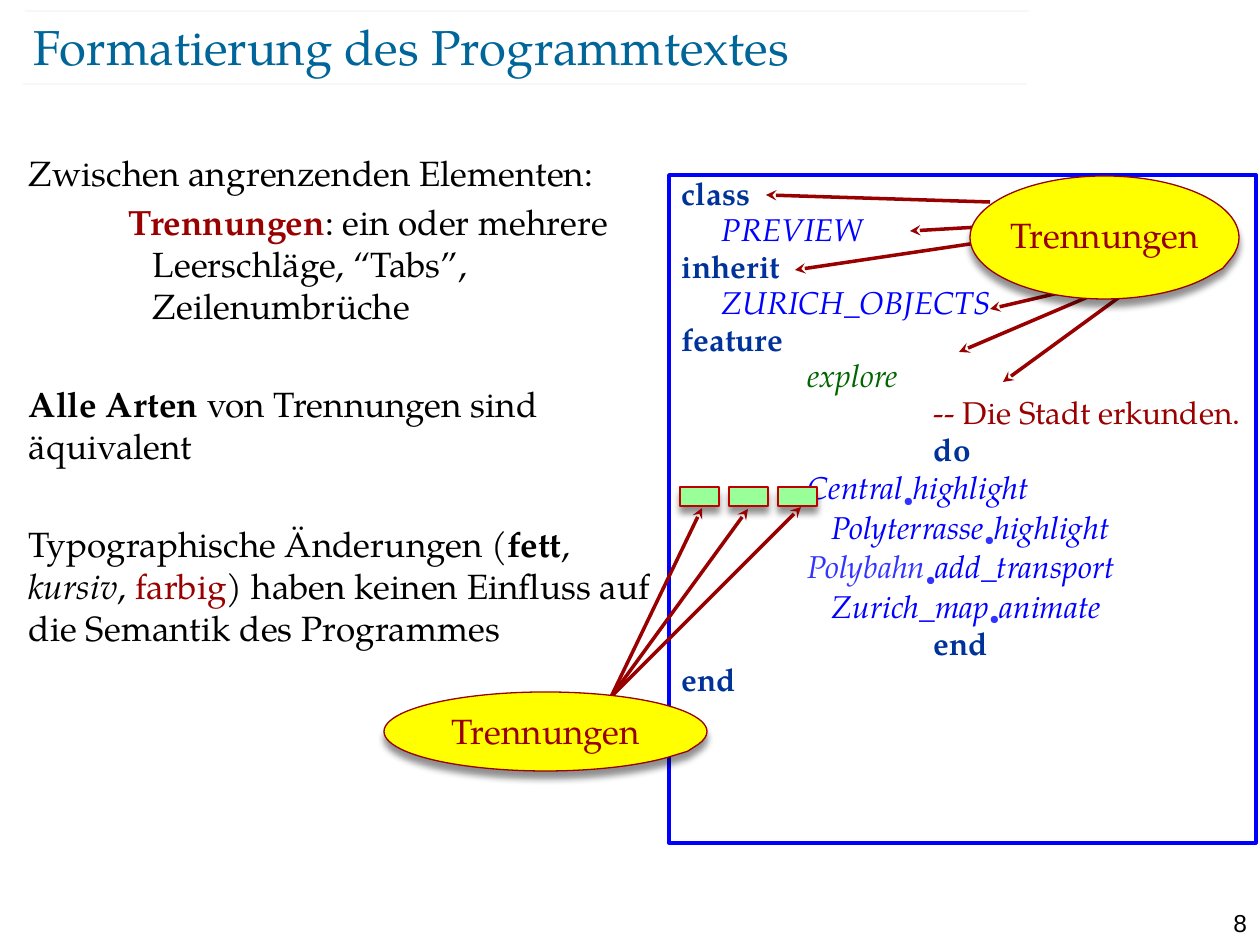
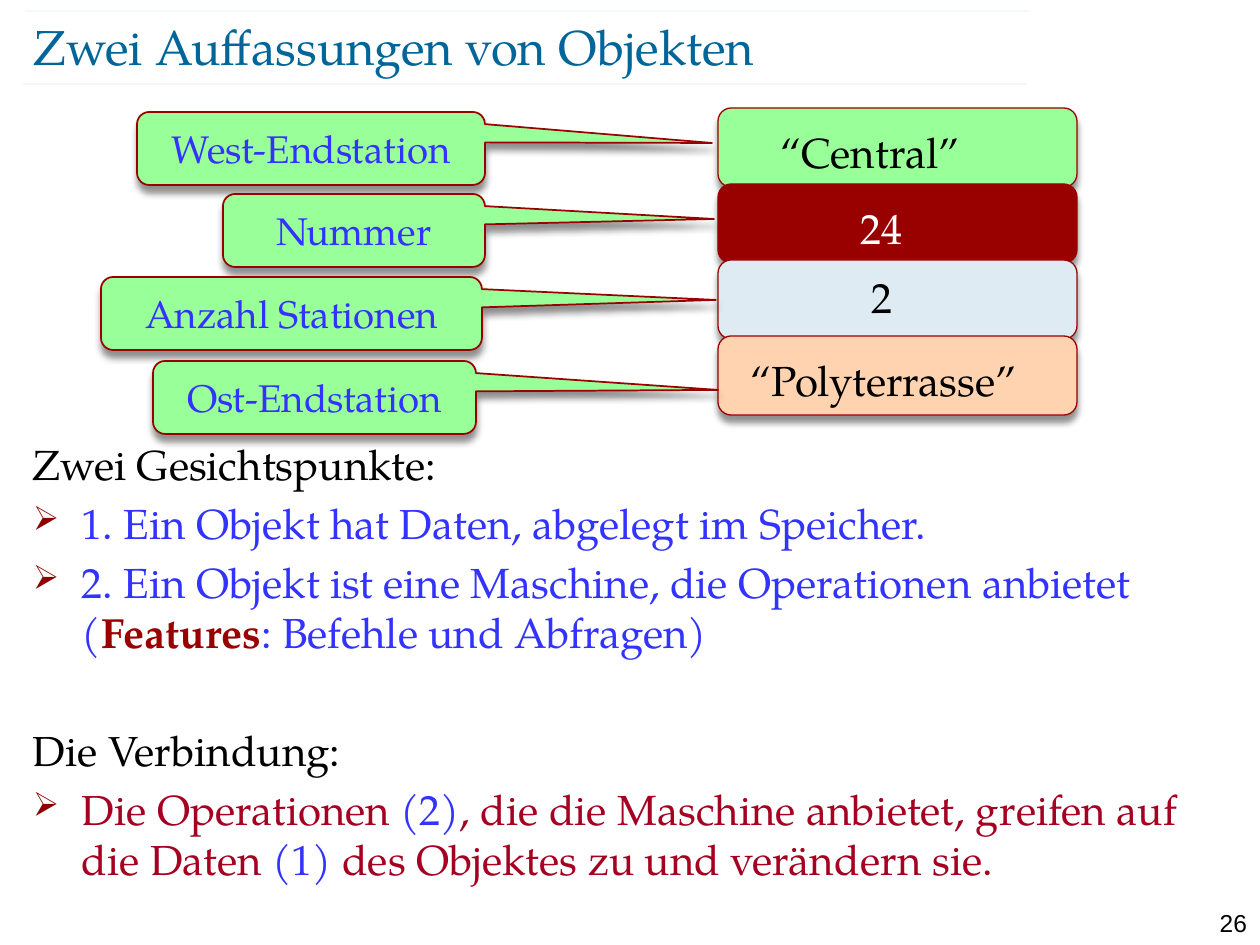
from dataclasses import dataclass
from typing import NamedTuple

from lxml import etree
from pptx import Presentation
from pptx.dml.color import RGBColor
from pptx.enum.shapes import MSO_CONNECTOR, MSO_SHAPE
from pptx.enum.text import MSO_ANCHOR, MSO_AUTO_SIZE, PP_ALIGN
from pptx.oxml.ns import qn
from pptx.util import Emu, Pt

LEFT, CENTER, RIGHT = PP_ALIGN.LEFT, PP_ALIGN.CENTER, PP_ALIGN.RIGHT
TOP, MIDDLE = MSO_ANCHOR.TOP, MSO_ANCHOR.MIDDLE
RECT, CARD = MSO_SHAPE.RECTANGLE, MSO_SHAPE.ROUNDED_RECTANGLE
ELLIPSE, CALLOUT = MSO_SHAPE.OVAL_CALLOUT, MSO_SHAPE.ROUNDED_RECTANGULAR_CALLOUT
STRAIGHT = MSO_CONNECTOR.STRAIGHT
TITLE_ONLY = 5
PX_PER_INCH = 126
INSETS = (13, 6, 13, 6)


@dataclass(frozen=True)
class Theme:
    font: str = "TeX Gyre Pagella"
    number_font: str = "Arial"
    title: str = "006699"
    black: str = "000000"
    white: str = "FFFFFF"
    red: str = "990000"
    crimson: str = "A50021"
    bullet: str = "8B0000"
    marker_edge: str = "C00000"
    blue: str = "3333FF"
    code_blue: str = "0000FF"
    keyword: str = "003399"
    feature: str = "006600"
    green: str = "99FF99"
    yellow: str = "FFFF00"
    pale_blue: str = "DFEBF3"
    peach: str = "FFD3AF"
    title_size: int = 28
    large_size: int = 24
    label_size: int = 22
    body_size: int = 20
    code_size: int = 18
    number_size: int = 14


THEME = Theme()


class Span(NamedTuple):
    text: str
    color: str = THEME.black
    bold: bool = False
    italic: bool = False
    baseline: int = 0


class Line(NamedTuple):
    spans: list
    before: float = 0
    margin: int = 0
    indent: int = 0
    bullet: str = ""


def px(length):
    return Emu(round(length * 914400 / PX_PER_INCH))


def rgb(color):
    return RGBColor.from_string(color)


def add_node(parent, tag, **attributes):
    node = etree.SubElement(parent, qn(tag))
    for name, value in attributes.items():
        node.set(name, str(value))
    return node


# Text
def set_bullet(para, character):
    properties = para._p.get_or_add_pPr()
    add_node(add_node(properties, "a:buClr"), "a:srgbClr", val=THEME.bullet)
    add_node(properties, "a:buSzPct", val=80000)
    add_node(properties, "a:buChar", char=character)


def write(shape, lines, size, align=LEFT, anchor=TOP, insets=INSETS,
          spacing=None, font=THEME.font):
    frame = shape.text_frame
    frame.word_wrap = True
    frame.auto_size = MSO_AUTO_SIZE.NONE
    frame.vertical_anchor = anchor
    (frame.margin_left, frame.margin_top,
     frame.margin_right, frame.margin_bottom) = map(px, insets)
    for index, line in enumerate(lines):
        para = frame.add_paragraph() if index else frame.paragraphs[0]
        properties = para._p.get_or_add_pPr()
        properties.set("marL", str(px(line.margin)))
        properties.set("indent", str(px(line.indent)))
        if line.bullet:
            set_bullet(para, line.bullet)
        para.alignment = align
        para.space_before = Pt(line.before if index else 0)
        if spacing:
            para.line_spacing = spacing
        for span in line.spans:
            run = para.add_run()
            run.text = span.text
            run.font.name = font
            run.font.size = Pt(size)
            run.font.color.rgb = rgb(span.color)
            run.font.bold = span.bold
            run.font.italic = span.italic
            if span.baseline:
                run._r.get_or_add_rPr().set("baseline", str(span.baseline * 1000))


def add_text(page, place, lines, size, **options):
    box = page.shapes.add_textbox(*map(px, place))
    write(box, lines, size, **options)


# Shapes
def add_panel(page, kind, place, fill=None, edge=THEME.red, width=0.75, shadow=True):
    panel = page.shapes.add_shape(kind, *map(px, place))
    if fill:
        panel.fill.solid()
        panel.fill.fore_color.rgb = rgb(fill)
    else:
        panel.fill.background()
    panel.line.color.rgb = rgb(edge)
    panel.line.width = Pt(width)
    panel.shadow.inherit = False
    if shadow:
        effects = panel.element.spPr.find(qn("a:effectLst"))
        outer = add_node(effects, "a:outerShdw", blurRad=Pt(4), dist=Pt(4),
                         dir=5400000, rotWithShape=0)
        shade = add_node(outer, "a:srgbClr", val=THEME.black)
        add_node(shade, "a:alpha", val=43000)
    return panel


def add_line(page, start, end, color, width, arrow=False, opacity=None):
    line = page.shapes.add_connector(STRAIGHT, *map(px, start + end))
    line.line.color.rgb = rgb(color)
    line.line.width = Pt(width)
    properties = line.element.spPr
    outline = properties.find(qn("a:ln"))
    if opacity:
        add_node(outline.find(".//" + qn("a:srgbClr")), "a:alpha", val=opacity * 1000)
    if arrow:
        add_node(outline, "a:tailEnd", type="stealth")
    add_node(properties, "a:effectLst")


def add_arrow(page, start, end):
    add_line(page, start, end, THEME.red, 2, arrow=True)


def add_separator_bubble(page, place, insets=INSETS):
    bubble = add_panel(page, ELLIPSE, place, THEME.yellow)
    bubble.adjustments[0], bubble.adjustments[1] = 0.44, 0.25
    write(bubble, [Line([Span("Trennungen", THEME.red)])], THEME.body_size,
          align=CENTER, insets=insets)


def add_field_callout(page, text, place, tip):
    left, top, width, height = place
    callout = add_panel(page, CALLOUT, place, THEME.green, width=1)
    callout.adjustments[0] = (tip[0] - left) / width - 0.5
    callout.adjustments[1] = (tip[1] - top) / height - 0.5
    write(callout, [Line([Span(text, THEME.blue)])], THEME.label_size,
          align=CENTER, anchor=MIDDLE, insets=(0, 6, 0, 6))


# Frame shared by both slides
def add_page(deck, title, number):
    page = deck.slides.add_slide(deck.slide_layouts[TITLE_ONLY])
    for left, top in ((23, 84), (25, 11)):
        add_line(page, (left, top), (left + 1004, top), THEME.title, 0.1, opacity=35)
    heading = page.shapes.title
    heading.left, heading.top, heading.width, heading.height = map(px, (34, 16, 1095, 60))
    write(heading, [Line([Span(title, THEME.title)])], THEME.title_size,
          anchor=MIDDLE, insets=(0, 0, 0, 0))
    add_text(page, (1190, 902, 70, 30), [Line([Span(str(number))])],
             THEME.number_size, align=RIGHT, font=THEME.number_font)
    return page


# Code listing
def code_line(text, color, margin=0, bold=False, italic=False):
    return Line([Span(text, color, bold, italic)], 3.6, margin)


def keyword(text, margin=0):
    return code_line(text, THEME.keyword, margin, bold=True)


def name(text, margin, color=THEME.code_blue):
    return code_line(text, color, margin, italic=True)


def call(target, feature, margin, color=THEME.code_blue):
    return Line([Span(target, color, italic=True),
                 Span("•", THEME.blue, baseline=-20),
                 Span(feature, THEME.code_blue, italic=True)], 3.6, margin)


def add_code(page):
    lines = [
        keyword("class"),
        name("PREVIEW", 40),
        keyword("inherit"),
        name("ZURICH_OBJECTS", 40),
        keyword("feature"),
        name("explore", 126, THEME.feature),
        code_line("-- Die Stadt erkunden.", THEME.red, 252),
        keyword("do", 252),
        call("Central", "highlight", 126),
        call("Polyterrasse", "highlight", 150),
        call("Polybahn", "add_transport", 126, THEME.blue),
        call("Zurich_map", "animate", 150),
        keyword("end", 252),
        keyword("end"),
    ]
    listing = add_panel(page, RECT, (669, 175, 587, 668), edge=THEME.code_blue,
                        width=2, shadow=False)
    write(listing, lines, THEME.code_size, spacing=0.8)


def build_formatting(deck):
    page = add_page(deck, "Formatierung des Programmtextes", 8)
    add_text(page, (16, 145, 654, 724), [
        Line([Span("Zwischen angrenzenden Elementen:")]),
        Line([Span("Trennungen", THEME.red, bold=True),
              Span(": ein oder mehrere Leerschläge, “Tabs”, Zeilenumbrüche")],
             4, margin=124, indent=-24),
        Line([Span("Alle Arten ", bold=True),
              Span("von Trennungen sind äquivalent")], 32),
        Line([Span("Typographische Änderungen ("), Span("fett", bold=True), Span(", "),
              Span("kursiv", italic=True), Span(", "), Span("farbig", THEME.red),
              Span(") haben keinen Einfluss auf die Semantik des Programmes")], 32),
    ], THEME.body_size)
    add_code(page)

    # Arrows to the breaks between code words
    for start, end in (((990, 202), (766, 195)), ((979, 227), (910, 231)),
                       ((990, 241), (795, 270)), ((1067, 291), (990, 309)),
                       ((1102, 291), (959, 352)), ((1121, 296), (1003, 382))):
        add_arrow(page, start, end)

    # Indentation markers and their arrows
    for column in range(3):
        add_panel(page, RECT, (680 + 49 * column, 487, 39, 19), THEME.green,
                  edge=THEME.marker_edge)
    for end in ((702, 508), (801, 507), (748, 509)):
        add_arrow(page, (611, 697), end)
    add_separator_bubble(page, (384, 692, 323, 79))
    add_separator_bubble(page, (970, 176, 269, 123), insets=(0, 20, 0, 0))


def build_objects(deck):
    page = add_page(deck, "Zwei Auffassungen von Objekten", 26)
    item = {"before": 4.8, "margin": 49, "indent": -49, "bullet": "➢"}
    add_text(page, (20, 433, 1208, 465), [
        Line([Span("Zwei Gesichtspunkte:")]),
        Line([Span("1. Ein Objekt hat Daten, abgelegt im Speicher.", THEME.blue)], **item),
        Line([Span("2. Ein Objekt ist eine Maschine, die Operationen anbietet (", THEME.blue),
              Span("Features", THEME.red, bold=True),
              Span(": Befehle und Abfragen)", THEME.blue)], **item),
        Line([Span("Die Verbindung:")], 38.4),
        Line([Span("Die Operationen ", THEME.crimson), Span("(2)", THEME.blue),
              Span(", die die Maschine anbietet, greifen auf die Daten ", THEME.crimson),
              Span("(1)", THEME.blue),
              Span(" des Objektes zu und verändern sie.", THEME.crimson)], **item),
    ], THEME.large_size)

    # Stored values
    for row, fill in enumerate((THEME.green, THEME.red, THEME.pale_blue, THEME.peach)):
        add_panel(page, CARD, (718, 108 + 76 * row, 359, 79), fill)
    for text, left, top, width, color, align in (
            ("“Central”", 767, 121, 307, THEME.black, LEFT),
            ("“Polyterrasse”", 738, 349, 338, THEME.black, LEFT),
            ("24", 728, 197, 307, THEME.white, CENTER),
            ("2", 728, 266, 307, THEME.black, CENTER)):
        add_text(page, (left, top, width, 63), [Line([Span(text, color)])],
                 THEME.large_size, align=align)

    # Field names pointing at the values
    for text, left, top, width, tip in (
            ("West-Endstation", 137, 112, 348, (712, 143)),
            ("Nummer", 223, 194, 262, (714, 219)),
            ("Anzahl Stationen", 101, 277, 381, (716, 300)),
            ("Ost-Endstation", 153, 361, 323, (718, 390))):
        add_field_callout(page, text, (left, top, width, 73), tip)


def main():
    deck = Presentation()
    deck.slide_width, deck.slide_height = px(1260), px(945)
    build_formatting(deck)
    build_objects(deck)
    deck.save("out.pptx")


if __name__ == "__main__":
    main()
